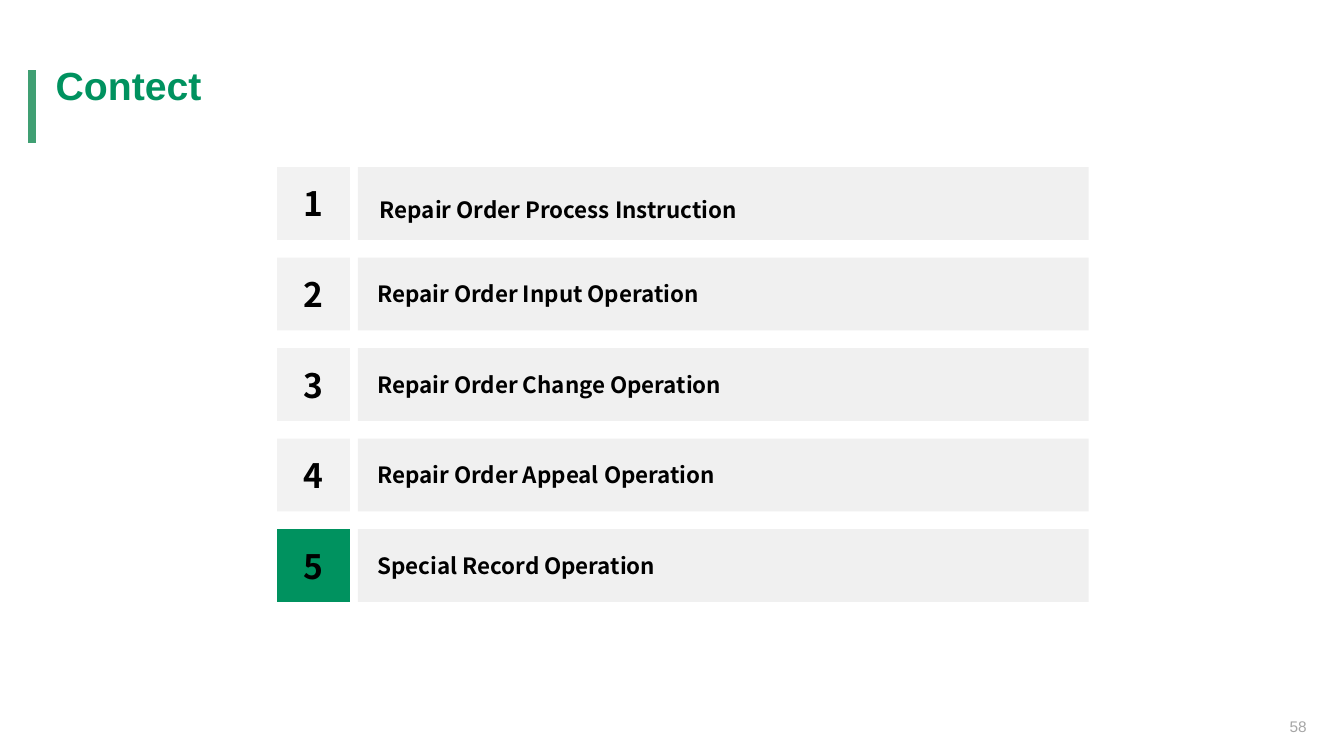
import pptx
import pptx.util
import pptx.dml.color
import pptx.enum.shapes
import pptx.enum.text
import pptx.oxml

Pt = pptx.util.Pt
RGB = pptx.dml.color.RGBColor.from_string
ALIGN = pptx.enum.text.PP_ALIGN
ANCHOR = pptx.enum.text.MSO_ANCHOR

COLORS = {"green": "00925F", "bar": "409F73", "label": "F0F0F0",
          "number": "F2F2F2", "text": "000000", "page": "A6A6A6"}
BODY_FONT = "Noto Sans CJK SC"
TOPICS = ["Repair Order Process Instruction", "Repair Order Input Operation",
          "Repair Order Change Operation", "Repair Order Appeal Operation",
          "Special Record Operation"]
CURRENT = 5
TOP, PITCH, SIDE = 119.4, 64.65, 52


def write(sp, text, size, font, color, align=ALIGN.LEFT, anchor=ANCHOR.TOP, bold=True):
    tf = sp.text_frame
    tf.word_wrap = True
    tf.vertical_anchor = anchor
    p = tf.paragraphs[0]
    p.alignment = align
    r = p.add_run()
    r.text = text
    r.font.size = Pt(size)
    r.font.name = font
    r.font.bold = bold
    r.font.color.rgb = RGB(COLORS[color])
    return p


def add_block(left, top, width, color):
    sp = slide.shapes.add_shape(pptx.enum.shapes.MSO_SHAPE.RECTANGLE,
                                Pt(left), Pt(top), Pt(width), Pt(SIDE))
    sp.shadow.inherit = False
    sp.fill.solid()
    sp.fill.fore_color.rgb = RGB(COLORS[color])
    sp.line.fill.background()
    return sp


prs = pptx.Presentation()
prs.slide_width, prs.slide_height = Pt(960), Pt(540)
slide = prs.slides.add_slide(prs.slide_layouts[5])

# Title with accent bar
title = slide.shapes.title
title.left, title.top, title.width, title.height = Pt(32.6), Pt(40.3), Pt(132.5), Pt(75)
write(title, "Contect", 28, "Arial", "green")

bar = slide.shapes.add_connector(pptx.enum.shapes.MSO_CONNECTOR.STRAIGHT,
                                 Pt(23), Pt(50.2), Pt(23), Pt(102.2))
bar.line.color.rgb = RGB(COLORS["bar"])
bar.line.width = Pt(6)
bar._element.spPr.append(pptx.oxml.parse_xml(
    '<a:effectLst xmlns:a="http://schemas.openxmlformats.org/drawingml/2006/main"/>'))

# Numbered topics, the current one in green
for i, topic in enumerate(TOPICS, 1):
    top = TOP + (i - 1) * PITCH
    label = add_block(255.6, top, 522, "label")
    number = add_block(198, top, SIDE, "green" if i == CURRENT else "number")
    write(number, str(i), 24, BODY_FONT, "text", ALIGN.CENTER, ANCHOR.MIDDLE)
    if i == 1:
        # The first topic sits in its own, slightly lower box
        box = slide.shapes.add_textbox(Pt(264.3), Pt(132.5), Pt(504.7), Pt(30.2))
        p = write(box, topic, 16, BODY_FONT, "text")
        p.line_spacing = 1.2
    else:
        label.text_frame.margin_left = Pt(14)
        write(label, topic, 16, BODY_FONT, "text", anchor=ANCHOR.MIDDLE)

# Page number
page = slide.shapes.add_textbox(Pt(877), Pt(509), Pt(63.4), Pt(21))
write(page, "58", 11, "Arial", "page", ALIGN.RIGHT, bold=False)

prs.save("out.pptx")
